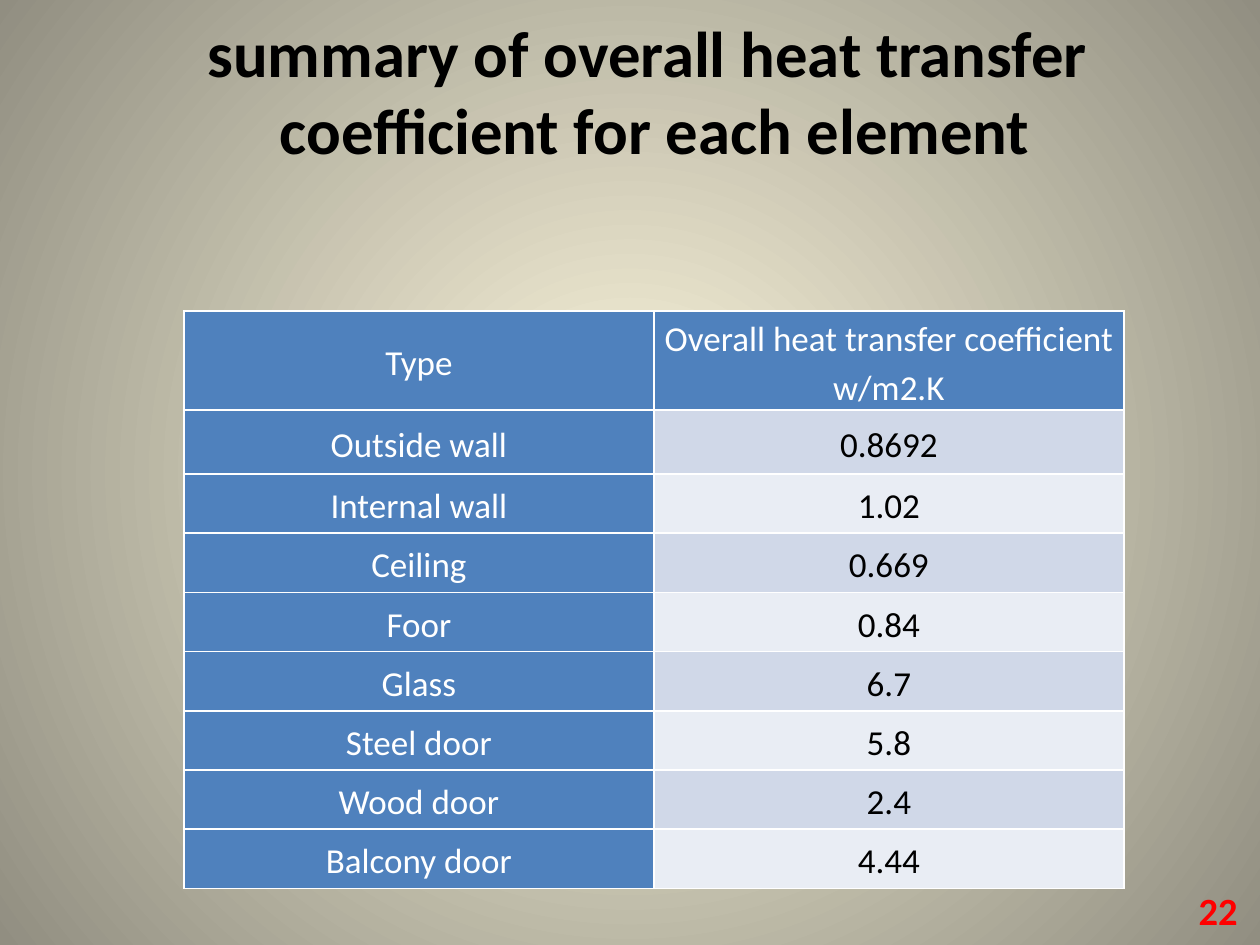
from lxml import etree
from pptx import Presentation
from pptx.dml.color import RGBColor
from pptx.enum.text import MSO_ANCHOR, PP_ALIGN
from pptx.oxml.ns import qn
from pptx.util import Inches, Pt

CENTER, RIGHT = PP_ALIGN.CENTER, PP_ALIGN.RIGHT
TOP, MIDDLE = MSO_ANCHOR.TOP, MSO_ANCHOR.MIDDLE
COLORS = {
    "background_center": "FCF7DD", "background_edge": "918E81",
    "header": "4F81BD", "band_dark": "D0D8E8", "band_light": "E9EDF4",
    "white": "FFFFFF", "black": "000000", "number": "FF0000",
}
ROWS = [
    ("Type", "Overall heat transfer coefficient w/m2.K"),
    ("Outside wall", "0.8692"),
    ("Internal wall", "1.02"),
    ("Ceiling", "0.669"),
    ("Foor", "0.84"),
    ("Glass", "6.7"),
    ("Steel door", "5.8"),
    ("Wood door", "2.4"),
    ("Balcony door", "4.44"),
]
ROW_HEIGHTS = [0.78, 0.51] + [0.47] * 7


def style_text(text_frame, size, color, alignment, bold=False):
    for paragraph in text_frame.paragraphs:
        paragraph.alignment = alignment
        paragraph.font.name = "Calibri"
        paragraph.font.size = Pt(size)
        paragraph.font.bold = bold
        paragraph.font.color.rgb = RGBColor.from_string(COLORS[color])


def add_borders(cell, bottom_width):
    """Draw white cell edges, 1 pt wide except for the bottom one."""
    properties = cell._tc.get_or_add_tcPr()
    widths = {"a:lnL": 1, "a:lnR": 1, "a:lnT": 1, "a:lnB": bottom_width}
    for index, (tag, width) in enumerate(widths.items()):
        line = etree.Element(qn(tag), w=str(Pt(width)))
        fill = etree.SubElement(line, qn("a:solidFill"))
        etree.SubElement(fill, qn("a:srgbClr"), val=COLORS["white"])
        properties.insert(index, line)


presentation = Presentation()
presentation.slide_width = Inches(10)
presentation.slide_height = Inches(7.5)
slide = presentation.slides.add_slide(presentation.slide_layouts[6])

# Radial background
background = slide.background.fill
background.gradient()
for stop, position, name in zip(background.gradient_stops, (0, 1),
                                ("background_center", "background_edge")):
    stop.position = position
    stop.color.rgb = RGBColor.from_string(COLORS[name])
gradient = next(slide._element.iter(qn("a:gradFill")))
gradient.remove(gradient.find(qn("a:lin")))
radial = etree.Element(qn("a:path"), path="circle")
etree.SubElement(radial, qn("a:fillToRect"), l="50000", t="50000", r="50000", b="50000")
gradient.find(qn("a:gsLst")).addnext(radial)

# Coefficient table
table_frame = slide.shapes.add_table(len(ROWS), 2, Inches(1.46), Inches(2.47),
                                     Inches(7.46), Inches(sum(ROW_HEIGHTS)))
table = table_frame.table
for column in table.columns:
    column.width = Inches(3.73)
for row_index, (values, height) in enumerate(zip(ROWS, ROW_HEIGHTS)):
    table.rows[row_index].height = Inches(height)
    for column_index, value in enumerate(values):
        is_header = row_index == 0 or column_index == 0
        band = "band_dark" if row_index % 2 else "band_light"
        cell = table.cell(row_index, column_index)
        cell.text = value
        cell.vertical_anchor = MIDDLE
        cell.margin_left = cell.margin_right = Inches(0.07)
        cell.margin_top = cell.margin_bottom = 0
        cell.fill.solid()
        cell.fill.fore_color.rgb = RGBColor.from_string(COLORS["header" if is_header else band])
        style_text(cell.text_frame, 20, "white" if is_header else "black", CENTER)
        cell.text_frame.paragraphs[0].line_spacing = 1.15
        add_borders(cell, 1)

# Title
title = slide.shapes.add_textbox(Inches(0.61), Inches(0.05), Inches(9.17), Inches(2.02))
title.text_frame.word_wrap = True
title.text_frame.vertical_anchor = TOP
title.text_frame.text = "summary of overall heat transfer \vcoefficient for each element"
style_text(title.text_frame, 37, "black", CENTER, bold=True)

# Slide number
number = slide.shapes.add_textbox(Inches(9.17), Inches(7.02), Inches(0.75), Inches(0.4))
number.text_frame.word_wrap = True
number.text_frame.vertical_anchor = MIDDLE
number.text_frame.text = "22"
style_text(number.text_frame, 22, "number", RIGHT, bold=True)

presentation.save("out.pptx")
